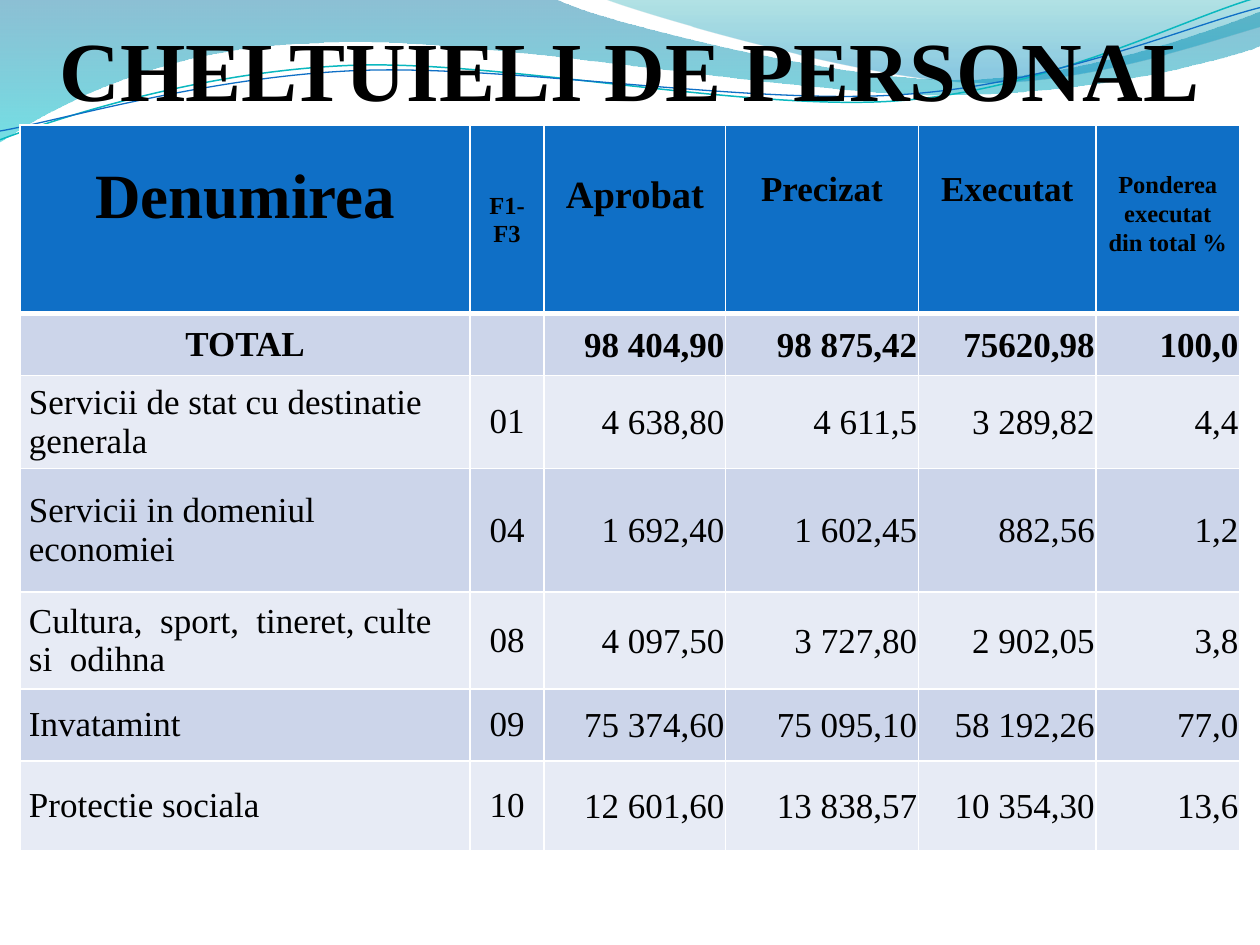
import math
from dataclasses import dataclass

from lxml import etree
from pptx import Presentation
from pptx import util as u
from pptx.dml.color import RGBColor
from pptx.enum import text
from pptx.oxml.ns import qn


@dataclass(frozen=True)
class Theme:
    """Colours, font and type sizes of the slide."""
    font: str = "Times New Roman"
    ink: str = "000000"
    rule: str = "FFFFFF"
    header: str = "0F6FC6"
    bands: tuple = ("CCD5EA", "E7EBF5")
    teal: str = "0AB8BF"
    title: int = 48
    body: int = 20
    small: int = 14


THEME = Theme()
CENTER, RIGHT, LEFT = text.PP_ALIGN.CENTER, text.PP_ALIGN.RIGHT, text.PP_ALIGN.LEFT
MIDDLE, TOP = text.MSO_ANCHOR.MIDDLE, text.MSO_ANCHOR.TOP
WAVE_TURN = 357.3

BANDS = [
    ((-0.01, -0.01, 10.02, 1.14),
     [(0, 0), (4.4, -0.01), (4.76, 0.17, 6.64, 0.63, 7.58, 0.63),
      (8.53, 0.63, 9.58, 0.26, 10, 0.09), (10.01, 0.36),
      (9.83, 0.44, 8.7, 0.76, 7.46, 0.75), (6.22, 0.75, 3.82, 0.28, 2.57, 0.34),
      (1.29, 0.36, 0.46, 0.83, -0.01, 1.13), (0, 0)],
     [(0, "0074A1", 45), (1, "00C6CF", 55)]),
    ((4.79, -0.01, 5.21, 0.7),
     [(4.79, -0.01), (5.09, 0.11, 6.82, 0.62, 7.69, 0.65),
      (8.56, 0.69, 9.61, 0.32, 10, 0.21), (10, 0), (4.79, -0.01)],
     [(0, "00A1A9", 30), (0.8, "008BBF", 45)]),
]
WAVES = [
    ((-0.02, 0.22, 10.02, 0.71),
     [(0, 1.11), (0.48, 0.93, 1.58, 0.57, 2.77, 0.52),
      (3.95, 0.47, 5.93, 0.89, 7.13, 0.8), (8.33, 0.71, 9.38, 0.15, 9.98, -0.02)],
     THEME.teal, 0.85),
    ((-0.02, 0.3, 10.03, 0.58),
     [(0, 1.04), (0.47, 0.96, 1.64, 0.61, 2.83, 0.56),
      (4.03, 0.51, 5.97, 0.84, 7.17, 0.75), (8.36, 0.67, 9.41, 0.21, 10, 0.06)],
     THEME.header, 0.75),
]

COLUMN_WIDTHS = [3.57, 0.59, 1.44, 1.53, 1.41, 1.14]
ROW_HEIGHTS = [1.5, 0.49, 0.74, 0.98, 0.77, 0.57, 0.71]
HEADINGS = [
    ("Denumirea", 36, 0.3), ("F1-F3", THEME.small, None), ("Aprobat", 22, 0.39),
    ("Precizat", 20, 0.36), ("Executat", 20, 0.36),
    ("Ponderea executat din total %", THEME.small, 0.36),
]
EXPENSES = [
    ("TOTAL", "", "98 404,90", "98 875,42", "75620,98", "100,0"),
    ("Servicii de stat cu destinatie generala", "01", "4 638,80", "4 611,5", "3 289,82", "4,4"),
    ("Servicii in domeniul economiei", "04", "1 692,40", "1 602,45", "882,56", "1,2"),
    ("Cultura,  sport,  tineret, culte si  odihna", "08", "4 097,50", "3 727,80", "2 902,05", "3,8"),
    ("Invatamint", "09", "75 374,60", "75 095,10", "58 192,26", "77,0"),
    ("Protectie sociala", "10", "12 601,60", "13 838,57", "10 354,30", "13,6"),
]


def rgb(value):
    """Return a colour from its hex value."""
    return RGBColor.from_string(value)


def to_frame(point, box, turn):
    """Return a slide point in the coordinates of a box turned about its centre."""
    left, top, width, height = box
    x, y = point[0] - left - width / 2, point[1] - top - height / 2
    cosine, sine = math.cos(math.radians(-turn)), math.sin(math.radians(-turn))
    return (u.Inches(x * cosine - y * sine + width / 2),
            u.Inches(x * sine + y * cosine + height / 2))


def add_outline(slide, box, segments, turn=0):
    """Draw a path of lines and cubic curves in its box."""
    closed = segments[0] == segments[-1]
    knots = [to_frame(segment[-2:], box, turn) for segment in segments]
    builder = slide.shapes.build_freeform(*knots[0])
    builder.add_line_segments(knots[1:], close=False)
    outline = builder.convert_to_shape()
    outline.shadow.inherit = False
    outline.left, outline.top, outline.width, outline.height = map(u.Inches, box)
    outline.rotation = turn
    track = next(outline._element.iter(qn("a:path")))
    for child in list(track):
        track.remove(child)
    track.set("w", str(outline.width))
    track.set("h", str(outline.height))
    for index, segment in enumerate(segments):
        kind = "cubicBezTo" if len(segment) == 6 else "lnTo" if index else "moveTo"
        command = etree.SubElement(track, qn(f"a:{kind}"))
        for pair in zip(segment[::2], segment[1::2]):
            x, y = to_frame(pair, box, turn)
            etree.SubElement(command, qn("a:pt"), x=str(x), y=str(y))
    if closed:
        etree.SubElement(track, qn("a:close"))
    return outline


def add_backdrop(slide):
    """Draw the translucent bands and the thin waves at the head of the slide."""
    for box, segments, stops in BANDS:
        band = add_outline(slide, box, segments)
        band.line.fill.background()
        band.fill.gradient()
        band.fill.gradient_angle = 270
        for stop, (position, color, _) in zip(band.fill.gradient_stops, stops):
            stop.position = position
            stop.color.rgb = rgb(color)
        for color, (_, _, opacity) in zip(band._element.iter(qn("a:srgbClr")), stops):
            etree.SubElement(color, qn("a:alpha")).set("val", str(opacity * 1000))
    for box, segments, color, width in WAVES:
        wave = add_outline(slide, box, segments, WAVE_TURN)
        wave.fill.background()
        wave.line.color.rgb = rgb(color)
        wave.line.width = u.Pt(width)


def set_margins(frame, left, top, right, bottom):
    """Set the four inner margins of a cell or text frame."""
    frame.margin_left, frame.margin_top = u.Inches(left), u.Inches(top)
    frame.margin_right, frame.margin_bottom = u.Inches(right), u.Inches(bottom)


def write(paragraph, wording, size, bold, align):
    """Put styled wording into a paragraph."""
    paragraph.text = wording
    paragraph.alignment = align
    font = paragraph.font
    font.name, font.size, font.bold = THEME.font, u.Pt(size), bold
    font.color.rgb = rgb(THEME.ink)


def add_title(slide, left, top, width, height):
    """Place the slide title at the foot of its box."""
    title = slide.shapes.add_textbox(*map(u.Inches, (left, top, width, height)))
    frame = title.text_frame
    frame.word_wrap = True
    frame.vertical_anchor = text.MSO_ANCHOR.BOTTOM
    set_margins(frame, 0, 0.05, 0, 0)
    write(frame.paragraphs[0], "CHELTUIELI DE PERSONAL", THEME.title, True, CENTER)


def finish_cell(cell, fill, above=1, below=1):
    """Give a cell its white borders and its fill."""
    properties = cell._tc.get_or_add_tcPr()
    for side, width in (("L", 1), ("R", 1), ("T", above), ("B", below)):
        border = etree.SubElement(properties, qn(f"a:ln{side}"), w=str(u.Pt(width)))
        paint = etree.SubElement(border, qn("a:solidFill"))
        etree.SubElement(paint, qn("a:srgbClr"), val=THEME.rule)
    cell.fill.solid()
    cell.fill.fore_color.rgb = rgb(fill)


def fill_heading(cell, wording, size, offset):
    """Write one column heading, lowered by its offset or centred without one."""
    cell.vertical_anchor = MIDDLE if offset is None else TOP
    set_margins(cell, 0.07, offset or 0, 0.07, 0)
    paragraph = cell.text_frame.paragraphs[0]
    write(paragraph, wording, size, True, CENTER)
    if size == THEME.small:
        paragraph.line_spacing = 1.07
    finish_cell(cell, THEME.header, below=3)


def fill_expense(cell, wording, row, column):
    """Write one cell of an expense row."""
    is_total = row == 0
    cell.vertical_anchor = MIDDLE
    if column > 1:
        set_margins(cell, 0.01, 0.01, 0.01, 0)
    elif not is_total:
        set_margins(cell, 0.07, 0, 0.07, 0)
    align = RIGHT if column > 1 else CENTER if column or is_total else LEFT
    write(cell.text_frame.paragraphs[0], wording, THEME.body, is_total, align)
    finish_cell(cell, THEME.bands[row % 2], above=3 if is_total else 1)


def add_expense_table(slide, left, top):
    """Place the table of personnel expenses."""
    size = sum(COLUMN_WIDTHS), sum(ROW_HEIGHTS)
    table = slide.shapes.add_table(len(ROW_HEIGHTS), len(COLUMN_WIDTHS),
                                   *map(u.Inches, (left, top, *size))).table
    table.horz_banding = False
    for column, width in zip(table.columns, COLUMN_WIDTHS):
        column.width = u.Inches(width)
    for row, height in zip(table.rows, ROW_HEIGHTS):
        row.height = u.Inches(height)
    for column, heading in enumerate(HEADINGS):
        fill_heading(table.cell(0, column), *heading)
    for row, expense in enumerate(EXPENSES):
        for column, wording in enumerate(expense):
            fill_expense(table.cell(row + 1, column), wording, row, column)


def main():
    """Build and save the presentation."""
    deck = Presentation()
    deck.slide_width, deck.slide_height = u.Inches(10), u.Inches(7.5)
    slide = deck.slides.add_slide(deck.slide_layouts[6])
    add_backdrop(slide)
    add_title(slide, 0, 0, 10, 0.94)
    add_expense_table(slide, 0.16, 0.99)
    deck.save("out.pptx")


if __name__ == "__main__":
    main()
